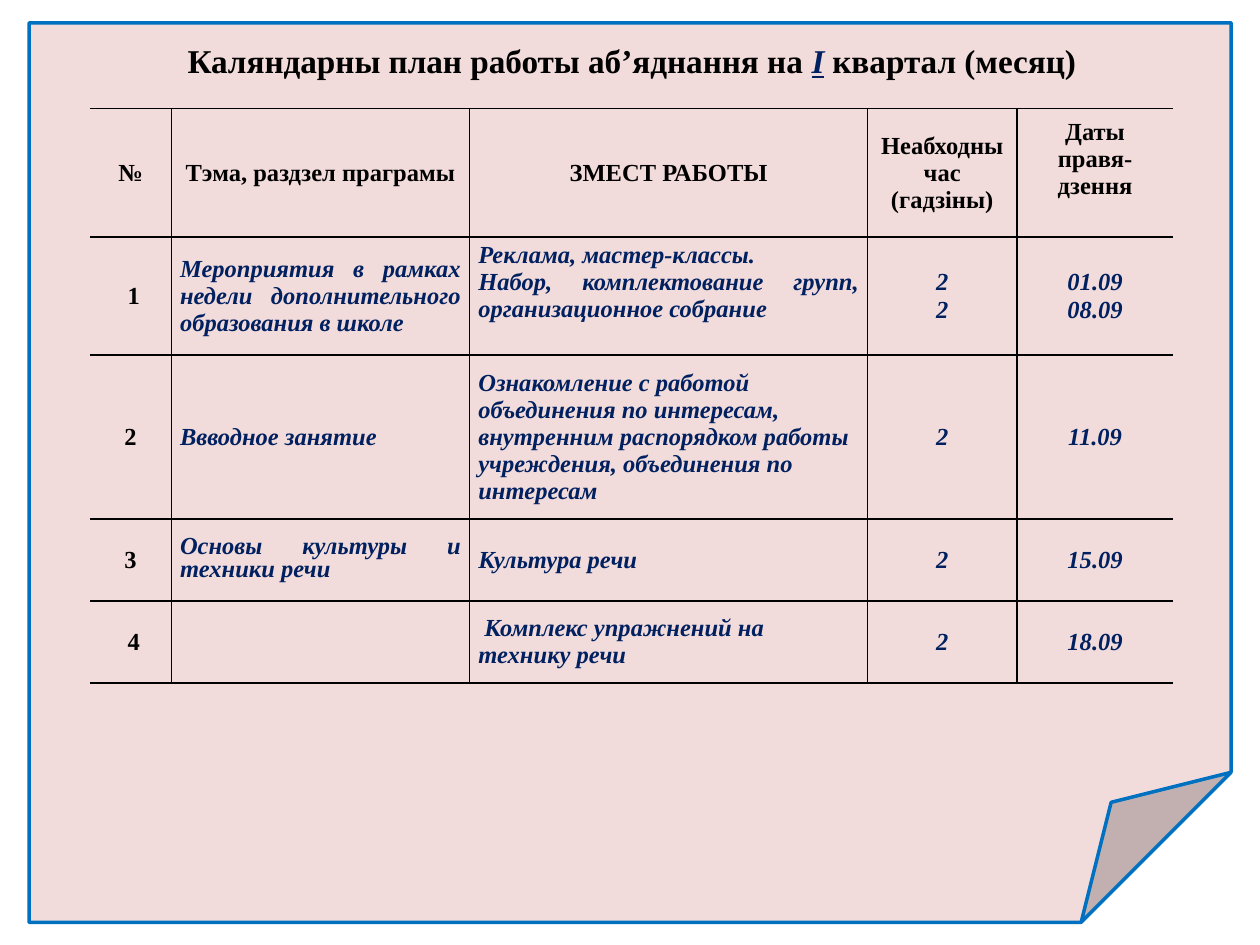
from lxml.etree import SubElement
from pptx import Presentation
from pptx.dml.color import RGBColor
from pptx.enum.shapes import MSO_SHAPE as Shape
from pptx.enum.text import MSO_ANCHOR as Anchor, MSO_AUTO_SIZE as AutoSize, PP_ALIGN as Align
from pptx.oxml.ns import qn
from pptx.util import Pt

FONT = "Times New Roman"
BLACK = RGBColor(0x00, 0x00, 0x00)
NAVY = RGBColor(0x00, 0x20, 0x60)
BLUE = RGBColor(0x00, 0x70, 0xC0)
PINK = RGBColor(0xF2, 0xDC, 0xDB)

COLUMN_WIDTHS = [46.5, 170.5, 227.5, 85.2, 89.5]
ROW_HEIGHTS = [73.4, 67.5, 93.6, 46.8, 46.8]
BLANK_LINE = 16

# Each line break in a cell starts a new paragraph
HEADER = ["№", "Тэма, раздзел праграмы", "ЗМЕСТ РАБОТЫ",
          "Неабходны час\n(гадзіны)", "Даты правя-дзення"]
PLAN = [
    [" 1", "Мероприятия в рамках недели дополнительного образования в школе",
     "Реклама, мастер-классы.\nНабор, комплектование групп, организационное собрание",
     "2\n2", "01.09\n08.09"],
    ["2", "Ввводное занятие",
     "Ознакомление с работой объединения по интересам, внутренним распорядком "
     "работы учреждения, объединения по интересам", "2", "11.09"],
    ["3", "Основы культуры и техники речи", "Культура речи", "2", "15.09"],
    [" 4", "", " Комплекс упражнений на технику речи", "2", "18.09"],
]


def add_span(para, text, size=14, color=BLACK, italic=False, underline=False):
    span = para.add_run()
    span.text = text
    font = span.font
    font.name, font.size, font.bold = FONT, Pt(size), True
    font.italic, font.underline = italic, underline
    font.color.rgb = color


def add_sheet(page):
    sheet = page.shapes.add_shape(Shape.FOLDED_CORNER, Pt(16.6), Pt(13), Pt(686.9), Pt(514))
    sheet.shadow.inherit = False
    sheet.fill.solid()
    sheet.fill.fore_color.rgb = PINK
    sheet.line.color.rgb = BLUE
    sheet.line.width = Pt(2)


def add_title(page):
    box = page.shapes.add_textbox(Pt(18.7), Pt(19.4), Pt(684.7), Pt(30.2))
    frame = box.text_frame
    frame.word_wrap = True
    frame.auto_size = AutoSize.SHAPE_TO_FIT_TEXT
    para = frame.paragraphs[0]
    para.alignment = Align.CENTER
    add_span(para, "Каляндарны план работы аб’яднання на ", size=19)
    add_span(para, "I", size=19, color=NAVY, italic=True, underline=True)
    add_span(para, " ", size=18)
    add_span(para, "квартал (месяц)", size=19)


def set_borders(cell, visible):
    properties = cell._tc.get_or_add_tcPr()
    for position, side in enumerate(("lnL", "lnR", "lnT", "lnB")):
        line = properties.makeelement(qn("a:" + side), {"w": str(Pt(1))})
        if side in visible:
            fill = SubElement(line, qn("a:solidFill"))
            SubElement(fill, qn("a:srgbClr"), val=str(BLACK))
        else:
            SubElement(line, qn("a:noFill"))
        properties.insert(position, line)


def fill_cell(cell, text, align, **style):
    cell.fill.background()
    cell.vertical_anchor = Anchor.MIDDLE
    cell.margin_left = cell.margin_right = Pt(5)
    cell.margin_top = cell.margin_bottom = 0
    if not text:
        return
    frame = cell.text_frame
    for index, line in enumerate(text.split("\n")):
        para = frame.add_paragraph() if index else frame.paragraphs[0]
        para.alignment = align
        add_span(para, line, **style)


def add_plan(page):
    rows = [HEADER] + PLAN
    last = len(HEADER) - 1
    table = page.shapes.add_table(len(rows), len(HEADER), Pt(51.4), Pt(62.1),
                                  Pt(sum(COLUMN_WIDTHS)), Pt(sum(ROW_HEIGHTS))).table
    table.first_row = table.horz_banding = False
    for column, width in zip(table.columns, COLUMN_WIDTHS):
        column.width = Pt(width)
    for r, texts in enumerate(rows):
        table.rows[r].height = Pt(ROW_HEIGHTS[r])
        for c, text in enumerate(texts):
            cell = table.cell(r, c)
            entry = r > 0 and c > 0
            align = Align.CENTER
            if entry and c == 1 or (r, c) == (1, 2):
                align = Align.JUSTIFY
            elif entry and c == 2:
                align = Align.LEFT
            fill_cell(cell, text, align, color=NAVY if entry else BLACK, italic=entry)
            sides = {"lnT", "lnB"}
            if c > 0:
                sides.add("lnL")
            if c < last:
                sides.add("lnR")
            set_borders(cell, sides)

    # Two cells keep one free line below their text
    for r, c in ((0, last), (1, 2)):
        table.cell(r, c).margin_bottom = Pt(BLANK_LINE)
    # One topic is set with tight lines
    tight = table.cell(3, 1).text_frame.paragraphs[0]
    tight.line_spacing = Pt(12.8)
    tight.space_before = Pt(0.5)


def main():
    deck = Presentation()
    deck.slide_width, deck.slide_height = Pt(720), Pt(540)
    page = deck.slides.add_slide(deck.slide_layouts[6])
    add_sheet(page)
    add_title(page)
    add_plan(page)
    deck.save("out.pptx")


if __name__ == "__main__":
    main()
